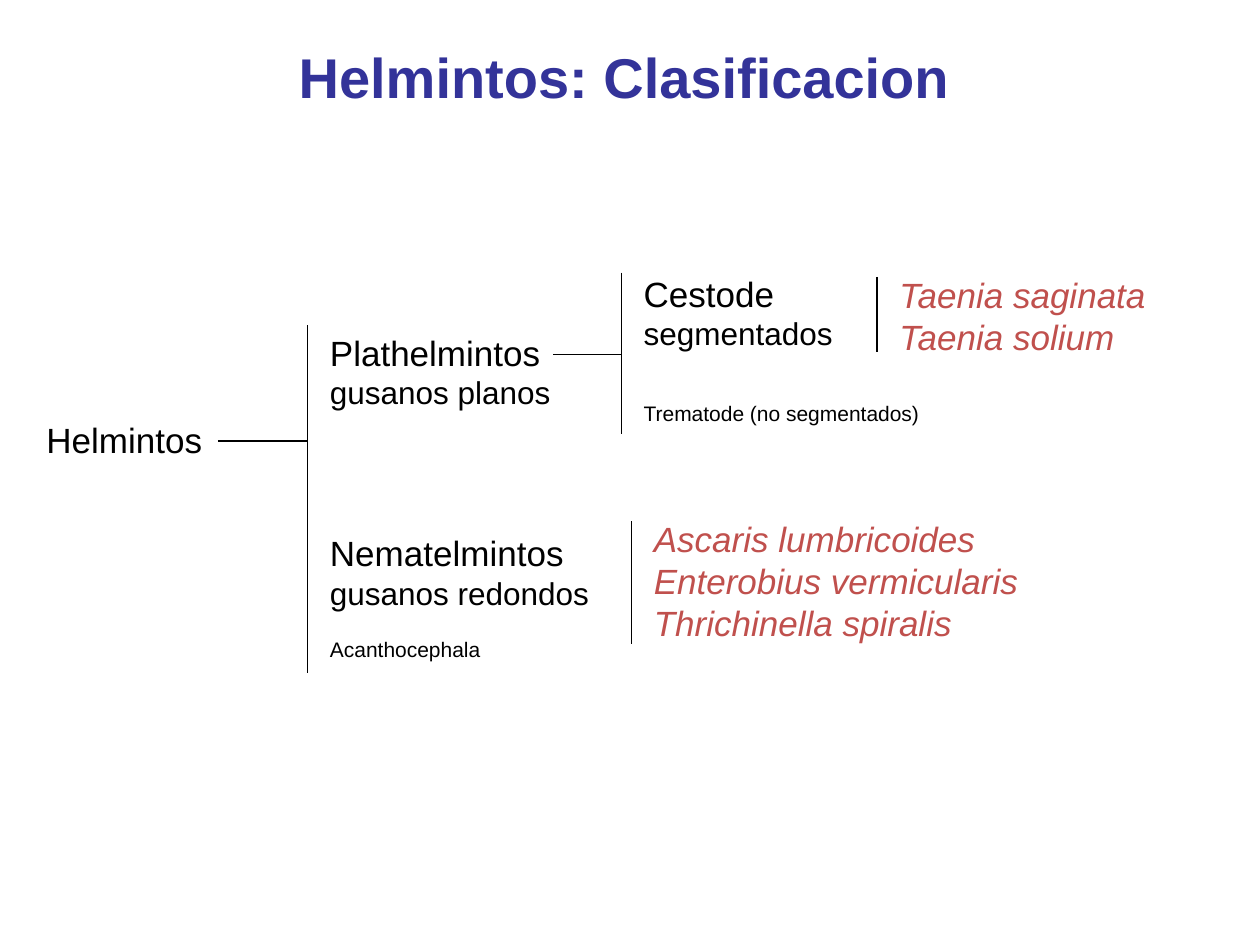
from pptx import Presentation
from pptx.dml.color import RGBColor
from pptx.enum.shapes import MSO_CONNECTOR
from pptx.enum.text import MSO_ANCHOR, MSO_AUTO_SIZE, PP_ALIGN
from pptx.util import Inches, Pt
from lxml import etree

STRAIGHT = MSO_CONNECTOR.STRAIGHT
TOP = MSO_ANCHOR.TOP
NO_FIT = MSO_AUTO_SIZE.NONE
LEFT = PP_ALIGN.LEFT
FONT = "Arial"
BLACK, BLUE, RED = "000000", "333399", "C0504D"
A_NS = "http://schemas.openxmlformats.org/drawingml/2006/main"

prs = Presentation()
prs.slide_width, prs.slide_height = Inches(10), Inches(7.5)
UNIT = prs.slide_width / 100  # grid of 100 columns by 75 rows
GAP = 0.8  # columns from a bracket to its text box


def grid(*vals):
    return [round(v * UNIT) for v in vals]


def color(code):
    return RGBColor.from_string(code)


def style(par, size, code, bold=False, italic=False):
    for run in par.runs:
        font = run.font
        font.name, font.size = FONT, Pt(size)
        font.bold, font.italic = bold, italic
        font.color.rgb = color(code)


def rule(slide, x1, y1, x2, y2):
    line = slide.shapes.add_connector(STRAIGHT, *grid(x1, y1, x2, y2))
    line.line.color.rgb = color(BLACK)
    line.line.width = Pt(0.75)
    etree.SubElement(line._element.spPr, f"{{{A_NS}}}effectLst")


def heading(slide, box, text):
    shape = slide.shapes.title
    shape.left, shape.top, shape.width, shape.height = grid(*box)
    frame = shape.text_frame
    frame.text = text
    frame.vertical_anchor, frame.auto_size = TOP, NO_FIT
    par = frame.paragraphs[0]
    par.alignment = LEFT
    style(par, 32, BLUE, bold=True)


def names(slide, box, items, code=BLACK, italic=False):
    """Stack lines of (text, size, space before) in a box."""
    frame = slide.shapes.add_textbox(*grid(*box)).text_frame
    frame.word_wrap = False
    frame.text = "\n".join(text for text, _, _ in items)
    for par, (_, size, space) in zip(frame.paragraphs, items):
        par.space_before = Pt(space)
        style(par, size, code, italic=italic)


def branch(slide, box, span, items, stem=None):
    """Bracketed names; span and stem height are shares of the box height."""
    left, top, _, high = box
    x = left - GAP
    names(slide, box, items)
    rule(slide, x, top + span[0] * high, x, top + span[1] * high)
    if stem:
        share, length = stem
        y = top + share * high
        rule(slide, x - length, y, x, y)


def species(slide, box, span, kinds):
    """Bracketed list of species in red italics."""
    left, top, _, high = box
    x = left - GAP
    names(slide, box, [(kind, 20, 0) for kind in kinds], RED, True)
    rule(slide, x, top + span[0] * high, x, top + span[1] * high)


slide = prs.slides.add_slide(prs.slide_layouts[5])
heading(slide, (22.7, 2.9, 75, 6.3), "Helmintos: Clasificacion")

# Root of the tree
names(slide, (2.7, 32.7, 14.4, 4.3), [("Helmintos", 20, 0)])

# Phyla and classes
branch(slide, (25.2, 25.8, 22.8, 27.9), (0, 0.99), [
    ("Plathelmintos", 20, 0), ("gusanos planos", 18, 0),
    ("Nematelmintos", 20, 69), ("gusanos redondos", 18, 0),
    ("Acanthocephala", 12, 14)], (0.33, 7.1))
branch(slide, (50.1, 21.1, 24.1, 13.5), (0.04, 0.99), [
    ("Cestode", 20, 0), ("segmentados", 18, 0),
    ("Trematode (no segmentados)", 12, 28)], (0.52, 5.4))

# Species
species(slide, (70.4, 21.2, 21.7, 7.7), (0.1, 0.87),
        ["Taenia saginata", "Taenia solium"])
species(slide, (50.9, 40.6, 31.2, 11.1), (0.07, 0.95),
        ["Ascaris lumbricoides", "Enterobius vermicularis",
         "Thrichinella spiralis"])

prs.save("out.pptx")
